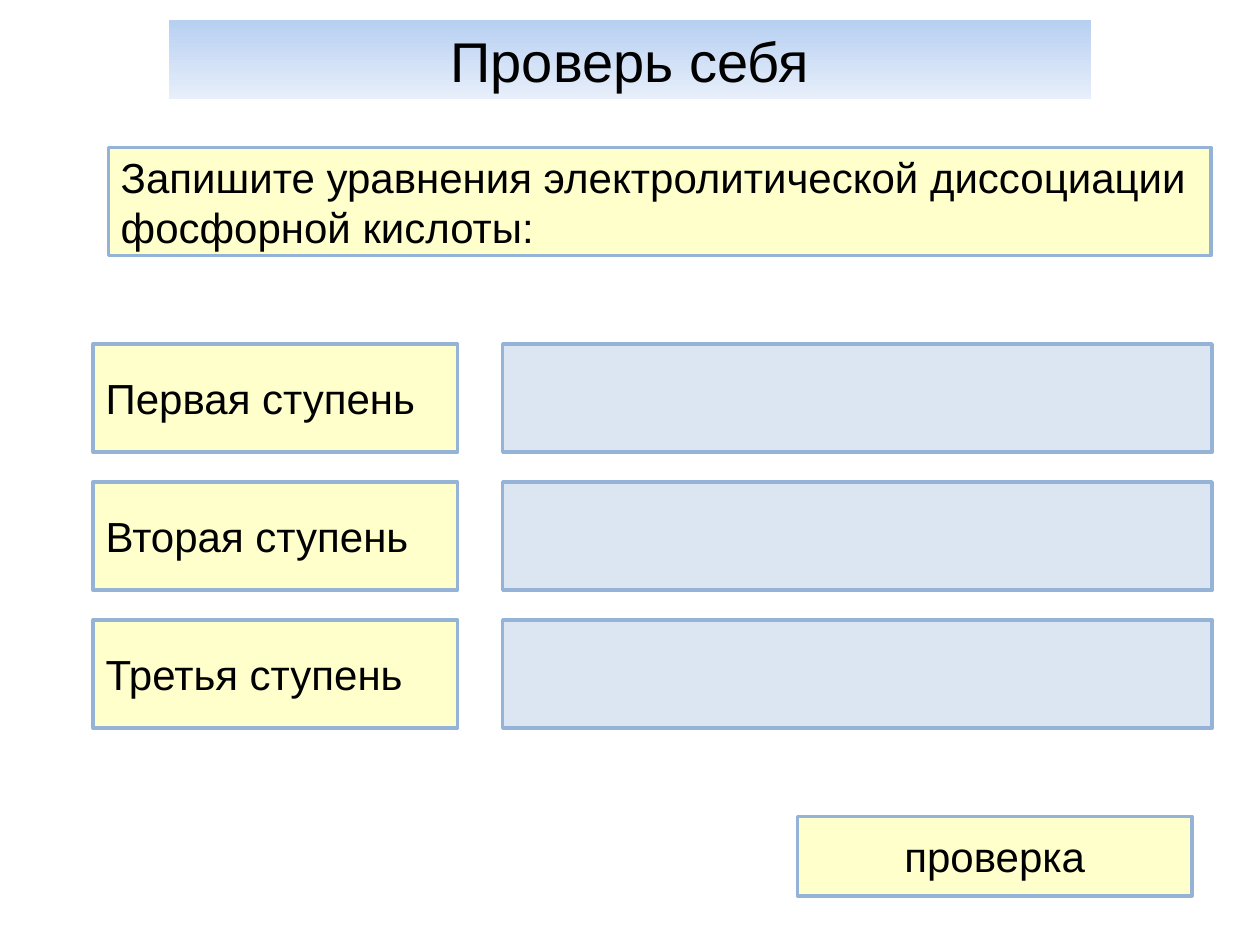
from dataclasses import dataclass

from pptx import Presentation
from pptx.dml.color import RGBColor
from pptx.enum.shapes import MSO_SHAPE as Shape
from pptx.enum.text import MSO_ANCHOR as Anchor, MSO_AUTO_SIZE as Fit, PP_ALIGN as Align
from pptx.util import Inches, Pt

COLUMNS, ROWS = 100, 75
STEPS = ("Первая ступень", "Вторая ступень", "Третья ступень")


def rgb(value):
    """Turn a hex string into a colour."""
    return RGBColor.from_string(value)


@dataclass
class Board:
    """Hold the style and the current slide."""

    prs: object
    s: object
    font: str = "Arial"
    ink: str = "000000"
    edge: str = "95B3D7"
    paper: str = "FFFFCC"
    blank: str = "DCE6F2"

    def place(self, sp, x, y, w, h):
        """Put a shape on the grid."""
        col, row = self.prs.slide_width / COLUMNS, self.prs.slide_height / ROWS
        frame = {"left": x * col, "top": y * row, "width": w * col, "height": h * row}
        for name, value in frame.items():
            setattr(sp, name, round(value))

    def label(self, sp, text, size, align):
        """Fill a shape with one formatted paragraph."""
        tf = sp.text_frame
        layout = {"word_wrap": True, "auto_size": Fit.NONE, "vertical_anchor": Anchor.MIDDLE}
        for name, value in layout.items():
            setattr(tf, name, value)
        p = tf.paragraphs[0]
        p.alignment = align
        r = p.add_run()
        r.text = text
        for name, value in {"name": self.font, "size": Pt(size)}.items():
            setattr(r.font, name, value)
        r.font.color.rgb = rgb(self.ink)

    def title(self, text, box, colors):
        """Set the title on a vertical gradient band."""
        sp = self.s.shapes.title
        self.place(sp, *box)
        sp.fill.gradient()
        sp.fill.gradient_angle = 270
        for stop, color in zip(sp.fill.gradient_stops, colors):
            stop.color.rgb = rgb(color)
        self.label(sp, text, 32, Align.CENTER)

    def panel(self, box, fill, text="", align=Align.LEFT):
        """Draw an outlined panel with optional text."""
        sp = self.s.shapes.add_shape(Shape.RECTANGLE, 0, 0, 0, 0)
        self.place(sp, *box)
        sp.shadow.inherit = False
        sp.fill.solid()
        sp.fill.fore_color.rgb = rgb(fill)
        sp.line.color.rgb = rgb(self.edge)
        sp.line.width = Pt(2)
        if text:
            self.label(sp, text, 24, align)


def main():
    """Build and save the slide."""
    prs = Presentation()
    prs.slide_width, prs.slide_height = Inches(10), Inches(7.5)
    board = Board(prs, prs.slides.add_slide(prs.slide_layouts[5]))
    board.title("Проверь себя", (13.4, 1.6, 73.2, 6.3), ("B7D0F1", "E8EFFA"))
    board.panel((8.6, 11.7, 87.5, 8.6), board.paper,
                "Запишите уравнения электролитической диссоциации фосфорной кислоты:")
    for i, step in enumerate(STEPS):
        y = 27.3 + 10.95 * i
        board.panel((7.4, y, 28.9, 8.6), board.paper, step)
        board.panel((39.9, y, 56.3, 8.6), board.blank)
    board.panel((63.3, 64.8, 31.3, 6.3), board.paper, "проверка", Align.CENTER)
    prs.save("out.pptx")


if __name__ == "__main__":
    main()
